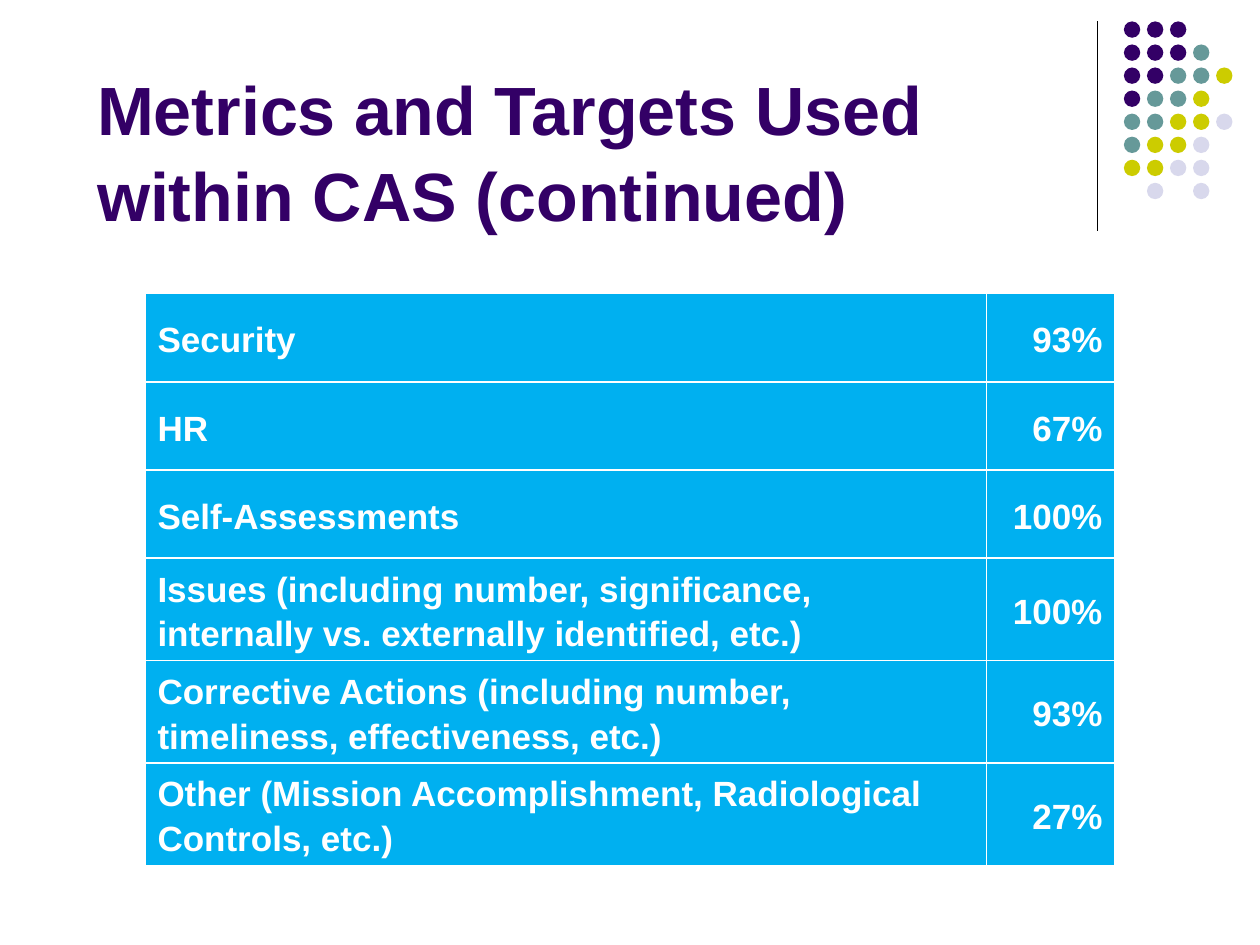
from pptx import Presentation
from pptx import util as u
from pptx.dml.color import RGBColor
from pptx.enum import shapes, text
from pptx.oxml.ns import qn
from lxml import etree

PURPLE = RGBColor(0x33, 0x00, 0x66)
TEAL = RGBColor(0x66, 0x99, 0x99)
LIME = RGBColor(0xCC, 0xCC, 0x00)
LAVENDER = RGBColor(0xD8, 0xD8, 0xEC)
SKY = RGBColor(0x00, 0xB0, 0xF0)
WHITE = RGBColor(0xFF, 0xFF, 0xFF)
BLACK = RGBColor(0x00, 0x00, 0x00)


def format_font(font, size, color):
    for name, value in {"name": "Arial", "size": u.Pt(size), "bold": True}.items():
        setattr(font, name, value)
    font.color.rgb = color


deck = Presentation()
deck.slide_width, deck.slide_height = u.Inches(10), u.Inches(7.5)
page = deck.slides.add_slide(deck.slide_layouts[5])

# Vertical rule beside the title
rule = page.shapes.add_connector(
    shapes.MSO_CONNECTOR.STRAIGHT,
    u.Inches(8.71), u.Inches(0.17), u.Inches(8.71), u.Inches(1.83))
rule.line.color.rgb = BLACK
rule.line.width = u.Pt(0.75)
etree.SubElement(rule._element.spPr, qn("a:effectLst"))

# Dot pattern: one letter per dot, a space for a gap
DOT_COLORS = {"P": PURPLE, "T": TEAL, "L": LIME, "V": LAVENDER}
DOT_ROWS = ["PPP", "PPPT", "PPTTL", "PTTL", "TTLLV", "TLLV", "LLVV", " V V"]
DOT_PITCH = 0.183
dots = page.shapes.add_group_shape()
for row, letters in enumerate(DOT_ROWS):
    for column, letter in enumerate(letters):
        if letter == " ":
            continue
        dot = dots.shapes.add_shape(
            shapes.MSO_SHAPE.OVAL,
            u.Inches(8.92 + column * DOT_PITCH), u.Inches(0.17 + row * DOT_PITCH),
            u.Inches(0.13), u.Inches(0.13))
        dot.shadow.inherit = False
        dot.fill.solid()
        dot.fill.fore_color.rgb = DOT_COLORS[letter]
        dot.line.fill.background()

# Title
title = page.shapes.title
title_place = {"left": 0.67, "top": 0.5, "width": 8, "height": 1.42}
for name, value in title_place.items():
    setattr(title, name, u.Inches(value))
frame = title.text_frame
frame.text = "Metrics and Targets Used within CAS (continued)"
frame.auto_size = text.MSO_AUTO_SIZE.NONE
frame.vertical_anchor = text.MSO_ANCHOR.BOTTOM
para = frame.paragraphs[0]
para.alignment = text.PP_ALIGN.LEFT
para.line_spacing = 1.05
format_font(para.runs[0].font, 39, PURPLE)

# Metrics table: label, target, row height
METRICS = [
    ("Security", "93%", 0.7),
    ("HR", "67%", 0.7),
    ("Self-Assessments", "100%", 0.7),
    ("Issues (including number, significance, internally vs. externally "
     "identified, etc.)", "100%", 0.6),
    ("Corrective Actions (including number, timeliness, effectiveness, etc.)",
     "93%", 0.6),
    ("Other (Mission Accomplishment, Radiological Controls, etc.)", "27%", 0.6),
]
ALIGNMENTS = [text.PP_ALIGN.LEFT, text.PP_ALIGN.RIGHT]
table = page.shapes.add_table(
    len(METRICS), 2, u.Inches(1.15), u.Inches(2.33), u.Inches(7.7), u.Inches(3.9)).table
table.horz_banding = False
for column, width in zip(table.columns, [6.68, 1.02]):
    column.width = u.Inches(width)
for row, (label, target, height) in zip(table.rows, METRICS):
    row.height = u.Inches(height)
    for cell, words, alignment in zip(row.cells, [label, target], ALIGNMENTS):
        cell.fill.solid()
        cell.fill.fore_color.rgb = SKY
        cell.vertical_anchor = text.MSO_ANCHOR.MIDDLE
        cell.text = words
        para = cell.text_frame.paragraphs[0]
        para.alignment = alignment
        para.line_spacing = 1.15
        format_font(para.runs[0].font, 20, WHITE)

deck.save("out.pptx")
